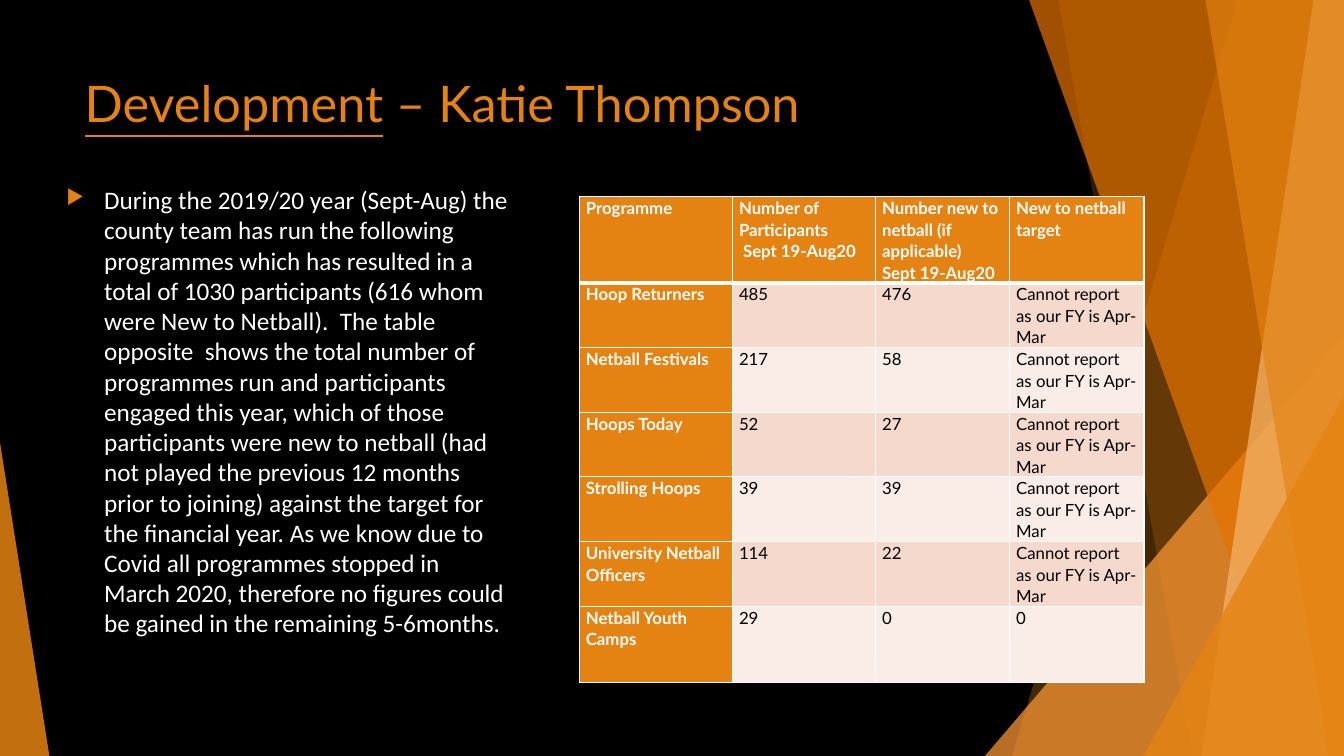
from lxml.etree import SubElement
from pptx import Presentation
from pptx.dml.color import RGBColor
from pptx.enum.shapes import MSO_SHAPE
from pptx.enum.text import MSO_ANCHOR, PP_ALIGN
from pptx.oxml import parse_xml
from pptx.oxml.ns import nsdecls, qn
from pptx.util import Pt

SLIDE_WIDTH, SLIDE_HEIGHT = 960, 540
ORANGE, WHITE, BLACK = "E48312", "FFFFFF", "000000"


def paint(fill, colour, opacity=100):
    fill.solid()
    fill.fore_color.rgb = RGBColor.from_string(colour)
    if opacity < 100:
        srgb = fill._xPr.find(qn("a:solidFill"))[0]
        SubElement(srgb, qn("a:alpha"), val=str(opacity * 1000))


def style(font, name, size, colour, bold=False):
    font.name = name
    font.size = Pt(size)
    font.bold = bold
    paint(font.fill, colour)


prs = Presentation()
prs.slide_width = Pt(SLIDE_WIDTH)
prs.slide_height = Pt(SLIDE_HEIGHT)
slide = prs.slides.add_slide(prs.slide_layouts[5])
paint(slide.background.fill, BLACK)

facets = [
    ("band", (884.2, 722.9), ORANGE, 30),
    ("band", (756, 851.8), ORANGE, 20),
    ("triangle", (703.5, 240, 256.5, 1), "FF9933", 72),
    ("band", (735.1, 929.5), "E57300", 70),
    ("band", (938.2, 858.2), "F3B56C", 70),
    ("band", (861.1, 949), ORANGE, 65),
    ("triangle", (816.7, 283, 143.3, 1), ORANGE, 80),
    ("triangle", (0, 316, 35.3, 0), ORANGE, 85),
]
for kind, geometry, colour, opacity in facets:
    if kind == "band":
        top_x, bottom_x = geometry
        outline = slide.shapes.build_freeform(Pt(top_x), 0)
        outline.add_line_segments([
            (Pt(SLIDE_WIDTH), 0),
            (Pt(SLIDE_WIDTH), Pt(SLIDE_HEIGHT)),
            (Pt(bottom_x), Pt(SLIDE_HEIGHT)),
        ])
        facet = outline.convert_to_shape()
    else:
        left, top, width, apex = geometry
        facet = slide.shapes.add_shape(
            MSO_SHAPE.ISOSCELES_TRIANGLE, Pt(left), Pt(top), Pt(width), Pt(SLIDE_HEIGHT - top))
        facet.adjustments[0] = apex
    paint(facet.fill, colour, opacity)
    facet.line.fill.background()
    facet.shadow.inherit = False

title = slide.shapes.title
title.left, title.top, title.width, title.height = Pt(53.3), Pt(48.2), Pt(676.8), Pt(103.7)
title.text_frame.vertical_anchor = MSO_ANCHOR.TOP
heading = title.text_frame.paragraphs[0]
heading.alignment = PP_ALIGN.LEFT
for words, underlined in [("Development", True), (" – Katie Thompson", False)]:
    run = heading.add_run()
    run.text = words
    style(run.font, "Lato", 36, ORANGE)
    run.font.underline = underlined

summary = slide.shapes.add_textbox(Pt(40.3), Pt(128.2), Pt(329.8), Pt(347.8)).text_frame
summary.word_wrap = True
overview = summary.paragraphs[0]
overview.text = (
    "During the 2019/20 year (Sept-Aug) the county team has run the following programmes "
    "which has resulted in a total of 1030 participants (616 whom were New to Netball).  "
    "The table opposite  shows the total number of programmes run and participants engaged "
    "this year, which of those participants were new to netball (had not played the previous "
    "12 months prior to joining) against the target for the financial year. As we know due to "
    "Covid all programmes stopped in March 2020, therefore no figures could be gained in the "
    "remaining 5-6months."
)
bullet = overview._p.get_or_add_pPr()
bullet.set("marL", str(Pt(27)))
bullet.set("indent", str(-Pt(27)))
SubElement(SubElement(bullet, qn("a:buClr")), qn("a:srgbClr"), val=ORANGE)
SubElement(bullet, qn("a:buSzPct"), val="80000")
SubElement(bullet, qn("a:buChar"), char="▶")
style(overview.runs[0].font, "Calibri", 18, WHITE)

no_target = "Cannot report as our FY is Apr-Mar"
programmes = [
    ("Programme", "Number of Participants\n Sept 19-Aug20",
     "Number new to netball (if applicable)\nSept 19-Aug20", "New to netball target"),
    ("Hoop Returners", "485", "476", no_target),
    ("Netball Festivals", "217", "58", no_target),
    ("Hoops Today", "52", "27", no_target),
    ("Strolling Hoops", "39", "39", no_target),
    ("University Netball Officers", "114", "22", no_target),
    ("Netball Youth Camps", "29", "0", "0"),
]
column_widths = [109.4, 102.2, 95.8, 95.8]
row_heights = [61.4] + [46.1] * 5 + [54.6]
table = slide.shapes.add_table(
    len(programmes), len(column_widths), Pt(414), Pt(140.4),
    Pt(sum(column_widths)), Pt(sum(row_heights))).table
for column, width in zip(table.columns, column_widths):
    column.width = Pt(width)
for row, height in zip(table.rows, row_heights):
    row.height = Pt(height)

for r, programme in enumerate(programmes):
    for c, entry in enumerate(programme):
        cell = table.cell(r, c)
        labelled = r == 0 or c == 0
        cell.margin_left = cell.margin_right = Pt(4.5)
        cell.margin_top = cell.margin_bottom = 0
        paint(cell.fill, ORANGE if labelled else ("FAEDE7", "F5D9CC")[r % 2])
        paragraph = cell.text_frame.paragraphs[0]
        paragraph.text = entry
        paragraph.line_spacing = 1.07
        for run in paragraph.runs:
            style(run.font, "Lato", 12, WHITE if labelled else BLACK, labelled)
        for position, side in enumerate("LRTB"):
            under_header = (r, side) in [(0, "B"), (1, "T")]
            border = parse_xml(
                f'<a:ln{side} {nsdecls("a")} w="{Pt(3 if under_header else 1)}">'
                f'<a:solidFill><a:srgbClr val="{WHITE}"/></a:solidFill></a:ln{side}>')
            cell._tc.get_or_add_tcPr().insert(position, border)

prs.save("out.pptx")
